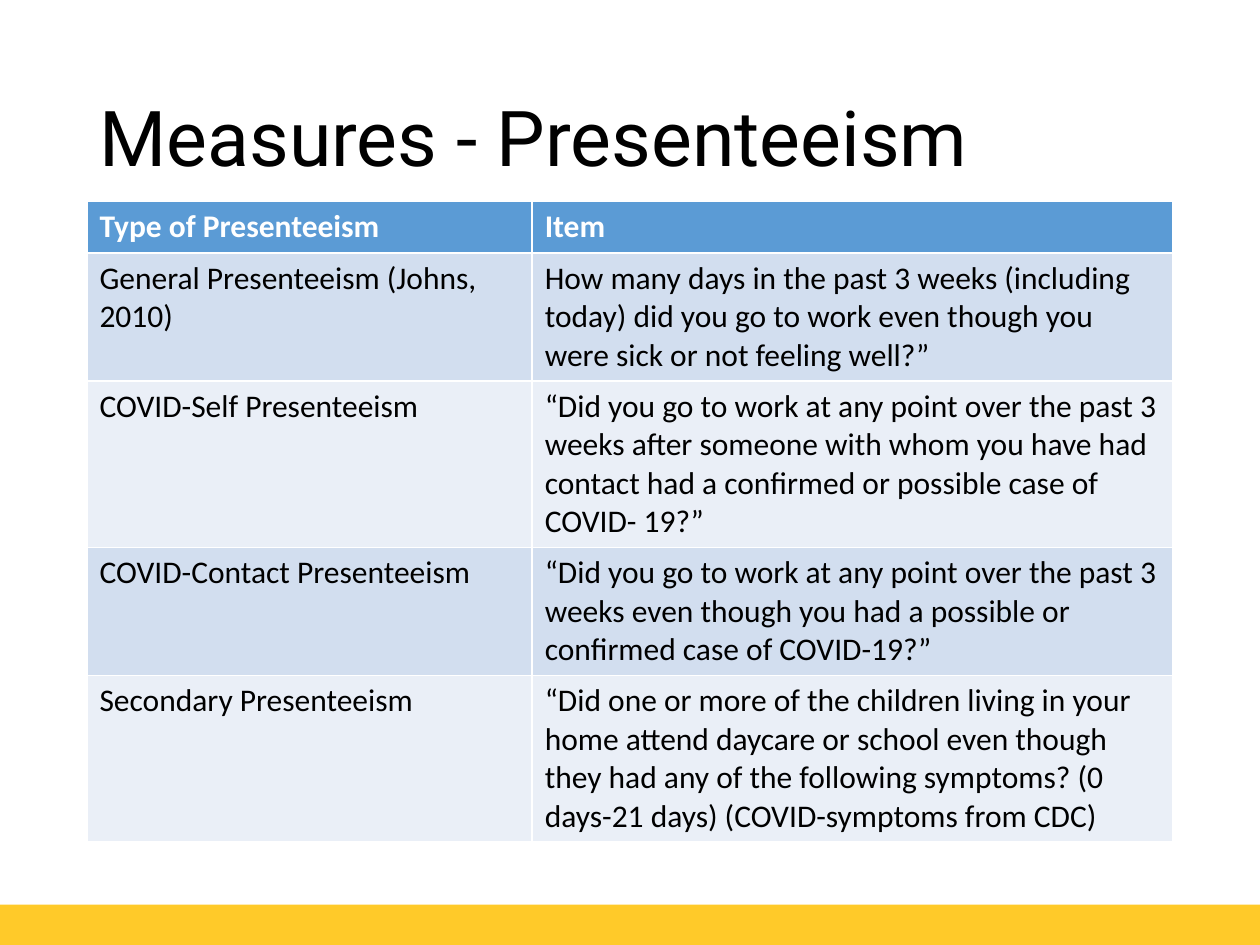
from dataclasses import dataclass

from pptx import Presentation
from pptx.dml.color import RGBColor
from pptx.enum.shapes import MSO_SHAPE
from pptx.enum.text import MSO_ANCHOR, MSO_AUTO_SIZE, PP_ALIGN
from pptx.util import Inches, Pt

TITLE = "Measures - Presenteeism"
ROWS = [
    ("Type of Presenteeism", "Item"),
    ("General Presenteeism (Johns, 2010)",
     "How many days in the past 3 weeks (including today) did you go to work "
     "even though you were sick or not feeling well?”"),
    ("COVID-Self Presenteeism",
     "“Did you go to work at any point over the past 3 weeks after someone with "
     "whom you have had contact had a confirmed or possible case of COVID- 19?”"),
    ("COVID-Contact Presenteeism",
     "“Did you go to work at any point over the past 3 weeks even though you had "
     "a possible or confirmed case of COVID-19?”"),
    ("Secondary Presenteeism",
     "“Did one or more of the children living in your home attend daycare or "
     "school even though they had any of the following symptoms? (0 days-21 days) "
     "(COVID-symptoms from CDC)"),
]


@dataclass(frozen=True)
class Theme:
    title_font: str = "Roboto"
    body_font: str = "Calibri"
    title_size: int = 44
    body_size: int = 18
    text: str = "000000"
    header_text: str = "FFFFFF"
    header: str = "5B9BD5"
    bands: tuple = ("EAEFF7", "D2DEEF")
    footer: str = "FFCA29"


THEME = Theme()
WIDTH, HEIGHT = Inches(10), Inches(7.5)
MARGIN = Inches(0.69)
CONTENT_W = WIDTH - 2 * MARGIN
COL_SHARES = (0.41, 0.59)
ROW_H = Inches(0.41)
FOOTER_H = Inches(0.32)


def style(p, font, size, color, bold=False):
    p.font.name = font
    p.font.size = Pt(size)
    p.font.bold = bold
    p.font.color.rgb = RGBColor.from_string(color)


def paint(fill, color):
    fill.solid()
    fill.fore_color.rgb = RGBColor.from_string(color)


def add_footer(s):
    bar = s.shapes.add_shape(MSO_SHAPE.RECTANGLE, 0, HEIGHT - FOOTER_H, WIDTH, FOOTER_H)
    bar.shadow.inherit = False
    paint(bar.fill, THEME.footer)
    bar.line.fill.background()


def set_title(s):
    sp = s.shapes.title
    sp.left, sp.top = MARGIN, Inches(0.4)
    sp.width, sp.height = CONTENT_W, Inches(1.45)
    tf = sp.text_frame
    tf.text = TITLE
    tf.auto_size = MSO_AUTO_SIZE.NONE
    tf.vertical_anchor = MSO_ANCHOR.MIDDLE
    p = tf.paragraphs[0]
    p.alignment = PP_ALIGN.LEFT
    p.line_spacing = 0.9
    style(p, THEME.title_font, THEME.title_size, THEME.text)


def add_measures(s):
    table = s.shapes.add_table(len(ROWS), len(COL_SHARES), MARGIN, Inches(1.6),
                               CONTENT_W, ROW_H * len(ROWS)).table
    for col, share in zip(table.columns, COL_SHARES):
        col.width = int(CONTENT_W * share)
    for i, row in enumerate(ROWS):
        header = i == 0
        for j, text in enumerate(row):
            cell = table.cell(i, j)
            cell.text = text
            paint(cell.fill, THEME.header if header else THEME.bands[i % 2])
            style(cell.text_frame.paragraphs[0], THEME.body_font, THEME.body_size,
                  THEME.header_text if header else THEME.text, header)


def main():
    prs = Presentation()
    prs.slide_width, prs.slide_height = WIDTH, HEIGHT
    s = prs.slides.add_slide(prs.slide_layouts[5])
    add_footer(s)
    set_title(s)
    add_measures(s)
    prs.save("out.pptx")


if __name__ == "__main__":
    main()
